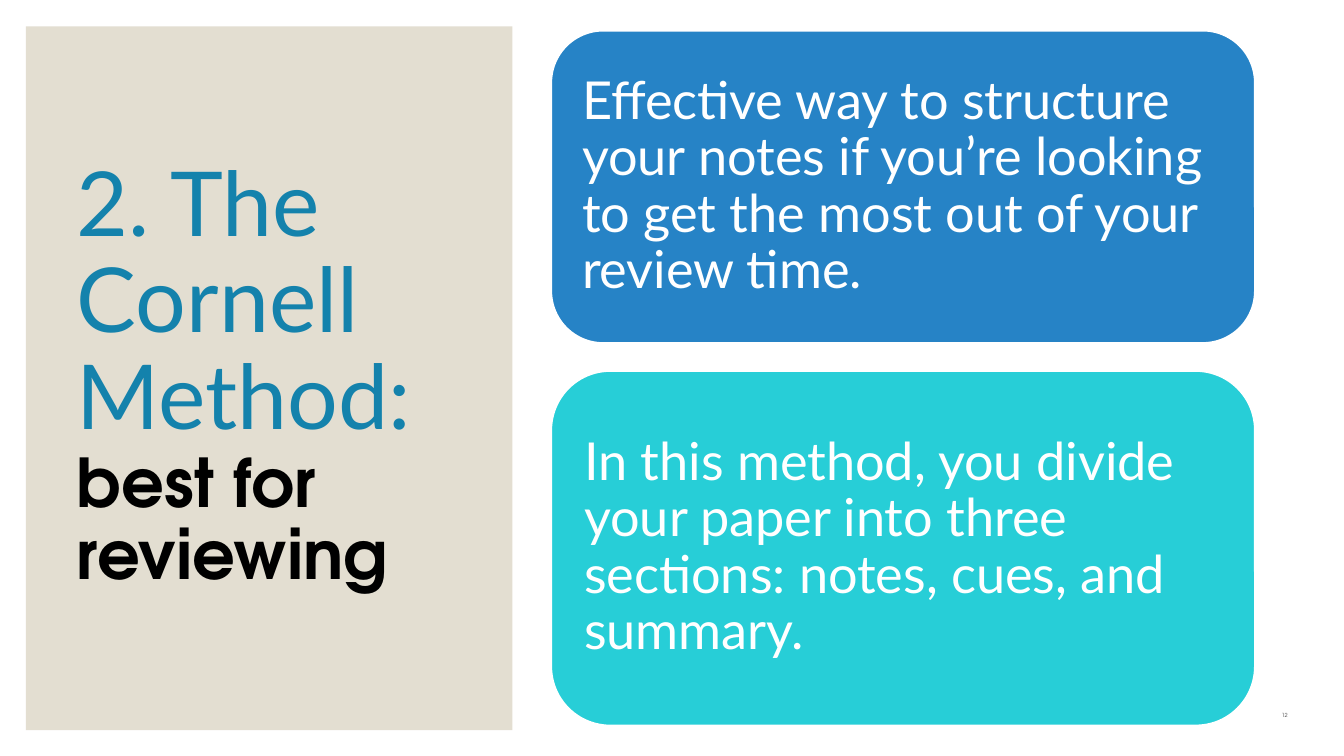
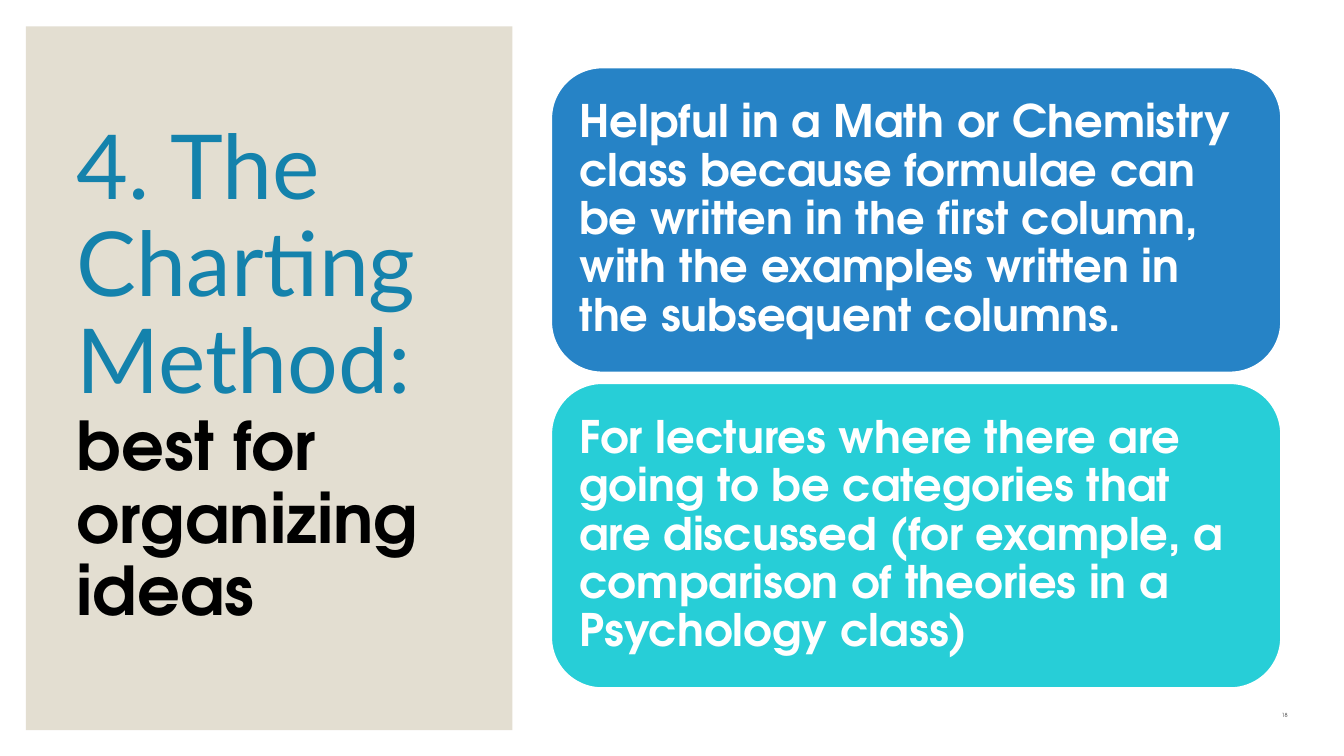
from pptx import Presentation
from pptx.dml.color import RGBColor
from pptx.enum.shapes import MSO_SHAPE
from pptx.enum.text import MSO_ANCHOR, MSO_AUTO_SIZE, PP_ALIGN
from pptx.util import Pt

RECT, ROUNDED = MSO_SHAPE.RECTANGLE, MSO_SHAPE.ROUNDED_RECTANGLE
MIDDLE, BOTTOM = MSO_ANCHOR.MIDDLE, MSO_ANCHOR.BOTTOM
LEFT, RIGHT = PP_ALIGN.LEFT, PP_ALIGN.RIGHT
NO_FIT = MSO_AUTO_SIZE.NONE

LATO, ADVENTOR = "Lato", "TeX Gyre Adventor"
WHITE, SAND, TITLE_BLUE = "FFFFFF", "E3DED1", "1482AC"
CARD_FILLS = ("2683C6", "27CED7")

METHOD = dict(name=LATO, size=48, color=TITLE_BLUE)
GAP = dict(METHOD, size=41)
PURPOSE = dict(name=ADVENTOR, size=36, color="000000", bold=True)
NUMBER = dict(name=ADVENTOR, size=3, color="404040")
PLAIN_CARD = dict(name=LATO, size=28, color=WHITE)
BOLD_CARD = dict(name=ADVENTOR, size=24, color=WHITE, bold=True)


def rgb(value):
    return RGBColor.from_string(value)


class Deck:
    def __init__(self, width, height):
        self.prs = Presentation()
        self.prs.slide_width, self.prs.slide_height = Pt(width), Pt(height)

    def new_slide(self):
        self.slide = self.prs.slides.add_slide(self.prs.slide_layouts[0])
        fill = self.slide.background.fill
        fill.solid()
        fill.fore_color.rgb = rgb(WHITE)
        subtitle = self.slide.placeholders[1]._element
        subtitle.getparent().remove(subtitle)

    def set_text(self, sp, runs, anchor=MIDDLE, align=LEFT, spacing=0.9,
                 inset=None):
        """Fill a shape with one paragraph of (text, format) runs."""
        tf = sp.text_frame
        frame = dict(word_wrap=True, auto_size=NO_FIT, vertical_anchor=anchor)
        if inset is not None:
            for side in ("left", "top", "right", "bottom"):
                frame["margin_" + side] = Pt(inset)
        for key, value in frame.items():
            setattr(tf, key, value)
        p = tf.paragraphs[0]
        p.alignment, p.line_spacing = align, spacing
        for text, style in runs:
            r = p.add_run()
            r.text = text
            for key, value in style.items():
                if key == "color":
                    r.font.color.rgb = rgb(value)
                else:
                    setattr(r.font, key, Pt(value) if key == "size" else value)
        return p

    def shape(self, kind, box, fill, line=None):
        sp = self.slide.shapes.add_shape(kind, *map(Pt, box))
        sp.shadow.inherit = False
        sp.fill.solid()
        sp.fill.fore_color.rgb = rgb(fill)
        if line:
            sp.line.color.rgb = rgb(line)
            sp.line.width = Pt(1)
        else:
            sp.line.fill.background()
        return sp

    def side_panel(self):
        sp = self.shape(RECT, (13.8, 14.2, 260.7, 377), SAND)
        self.slide.shapes._spTree.insert(2, sp._element)  # behind the title

    def title(self, runs):
        sp = self.slide.shapes.title
        sp.left, sp.top, sp.width, sp.height = map(Pt, (34, 33.2, 222.5, 337))
        self.set_text(sp, runs)

    def number(self, text):
        sp = self.slide.shapes.add_textbox(*map(Pt, (648, 372.2, 49, 16.6)))
        p = self.set_text(sp, [(text, NUMBER)], BOTTOM, RIGHT, 0.8)
        p.space_after = Pt(6)

    def cards(self, texts, style, width, rows, inset):
        """Stack one rounded card per text; rows holds (top, height)."""
        for text, fill, (top, height) in zip(texts, CARD_FILLS, rows):
            sp = self.shape(ROUNDED, (295.3, top, width, height), fill, WHITE)
            self.set_text(sp, [(text, style)], inset=inset)

    def method_slide(self, title, number, **cards):
        self.new_slide()
        self.side_panel()
        self.title(title)
        self.number(number)
        self.cards(**cards)


def main():
    deck = Deck(720, 405)
    deck.method_slide(
        [("2. The Cornell Method:", METHOD), (" ", GAP),
         ("best for reviewing", PURPOSE)],
        "12",
        texts=(
            "Effective way to structure your notes if you’re looking to get "
            "the most out of your review time.",
            "In this method, you divide your paper into three sections: "
            "notes, cues, and summary.",
        ),
        style=PLAIN_CARD, width=377,
        rows=((16.4, 167.4), (198.7, 190)), inset=8.4,
    )
    deck.method_slide(
        [("4. The Charting Method: ", METHOD),
         ("best for organizing ideas", PURPOSE)],
        "18",
        texts=(
            "Helpful in a Math or Chemistry class because formulae can be "
            "written in the first column, with the examples written in the "
            "subsequent columns.",
            "For lectures where there are going to be categories that are "
            "discussed (for example, a comparison of theories in a "
            "Psychology class)",
        ),
        style=BOLD_CARD, width=391,
        rows=((36.2, 163.4), (205.3, 163.4)), inset=7.2,
    )
    deck.prs.save("out.pptx")


if __name__ == "__main__":
    main()
